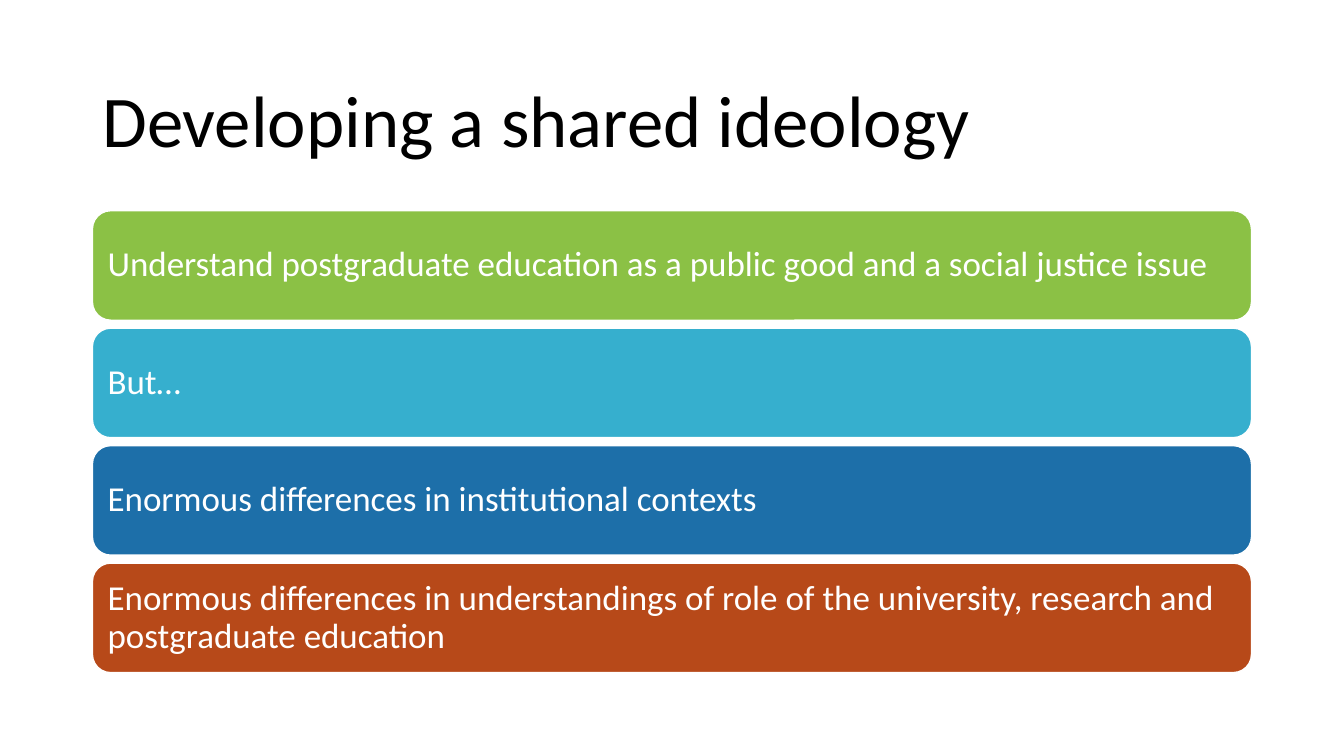
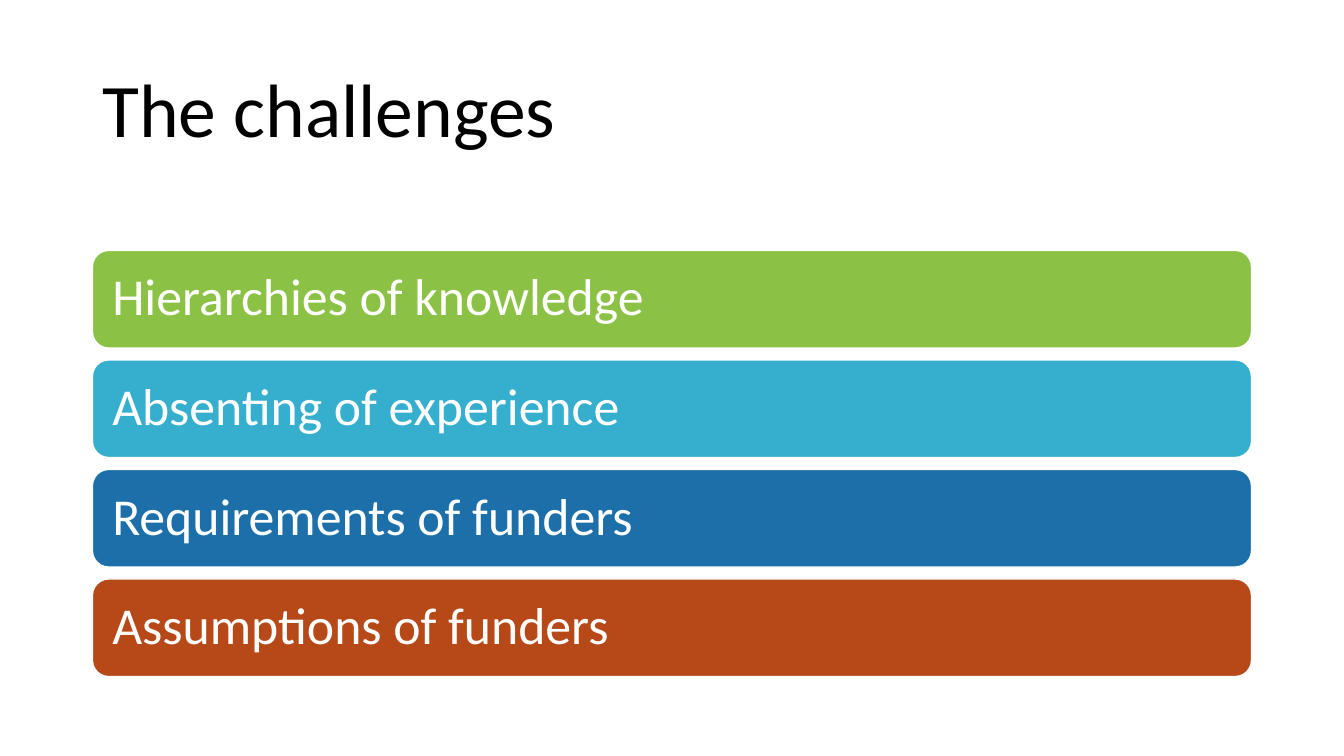
from pptx import Presentation
from pptx.dml.color import RGBColor
from pptx.enum.shapes import MSO_SHAPE
from pptx.enum.text import MSO_ANCHOR, PP_ALIGN
from pptx.util import Cm, Pt

ROUNDED = MSO_SHAPE.ROUNDED_RECTANGLE
MIDDLE = MSO_ANCHOR.MIDDLE
LEFT = PP_ALIGN.LEFT

# Shared style
FONT = "Calibri"
BLACK, WHITE = "000000", "FFFFFF"
BAR_COLOURS = ["8BC145", "36AFCE", "1D6FA9", "B74919"]
MARGIN, CONTENT_WIDTH = 2.33, 29.21


def colour(value):
    return RGBColor.from_string(value)


def write(box, text, size, text_colour):
    frame = box.text_frame
    frame.word_wrap = True
    frame.vertical_anchor = MIDDLE
    para = frame.paragraphs[0]
    para.alignment = LEFT
    para.line_spacing = 0.9
    span = para.add_run()
    span.text = text
    span.font.name = FONT
    span.font.size = Pt(size)
    span.font.color.rgb = colour(text_colour)


# Slide content, lengths in centimetres
slides = [
    {
        "title": "Developing a shared ideology",
        "title_top": 1.55, "title_height": 3.15, "title_size": 52,
        "bar_top": 5.31, "bar_height": 2.76, "bar_step": 2.96,
        "inset": 0.25, "bar_size": 25,
        "bars": [
            "Understand postgraduate education as a public good and a social justice issue",
            "But…",
            "Enormous differences in institutional contexts",
            "Enormous differences in understandings of role of the university, "
            "research and postgraduate education",
        ],
    },
    {
        "title": "The challenges",
        "title_top": 1.01, "title_height": 3.68, "title_size": 54,
        "bar_top": 6.31, "bar_height": 2.46, "bar_step": 2.76,
        "inset": 0.38, "bar_size": 37,
        "bars": [
            "Hierarchies of knowledge",
            "Absenting of experience",
            "Requirements of funders",
            "Assumptions of funders",
        ],
    },
]

deck = Presentation()
deck.slide_width, deck.slide_height = Cm(33.87), Cm(19.05)
blank = deck.slide_layouts[6]

for content in slides:
    page = deck.slides.add_slide(blank)

    # Title
    title = page.shapes.add_textbox(
        Cm(MARGIN), Cm(content["title_top"]),
        Cm(CONTENT_WIDTH), Cm(content["title_height"]))
    write(title, content["title"], content["title_size"], BLACK)

    # Stacked bars
    for row, (text, fill) in enumerate(zip(content["bars"], BAR_COLOURS)):
        bar = page.shapes.add_shape(
            ROUNDED, Cm(MARGIN), Cm(content["bar_top"] + row * content["bar_step"]),
            Cm(CONTENT_WIDTH), Cm(content["bar_height"]))
        bar.shadow.inherit = False
        bar.fill.solid()
        bar.fill.fore_color.rgb = colour(fill)
        bar.line.color.rgb = colour(WHITE)
        bar.line.width = Pt(1)
        frame = bar.text_frame
        frame.margin_left = frame.margin_right = Cm(content["inset"])
        frame.margin_top = frame.margin_bottom = Cm(content["inset"])
        write(bar, text, content["bar_size"], WHITE)

deck.save("out.pptx")
